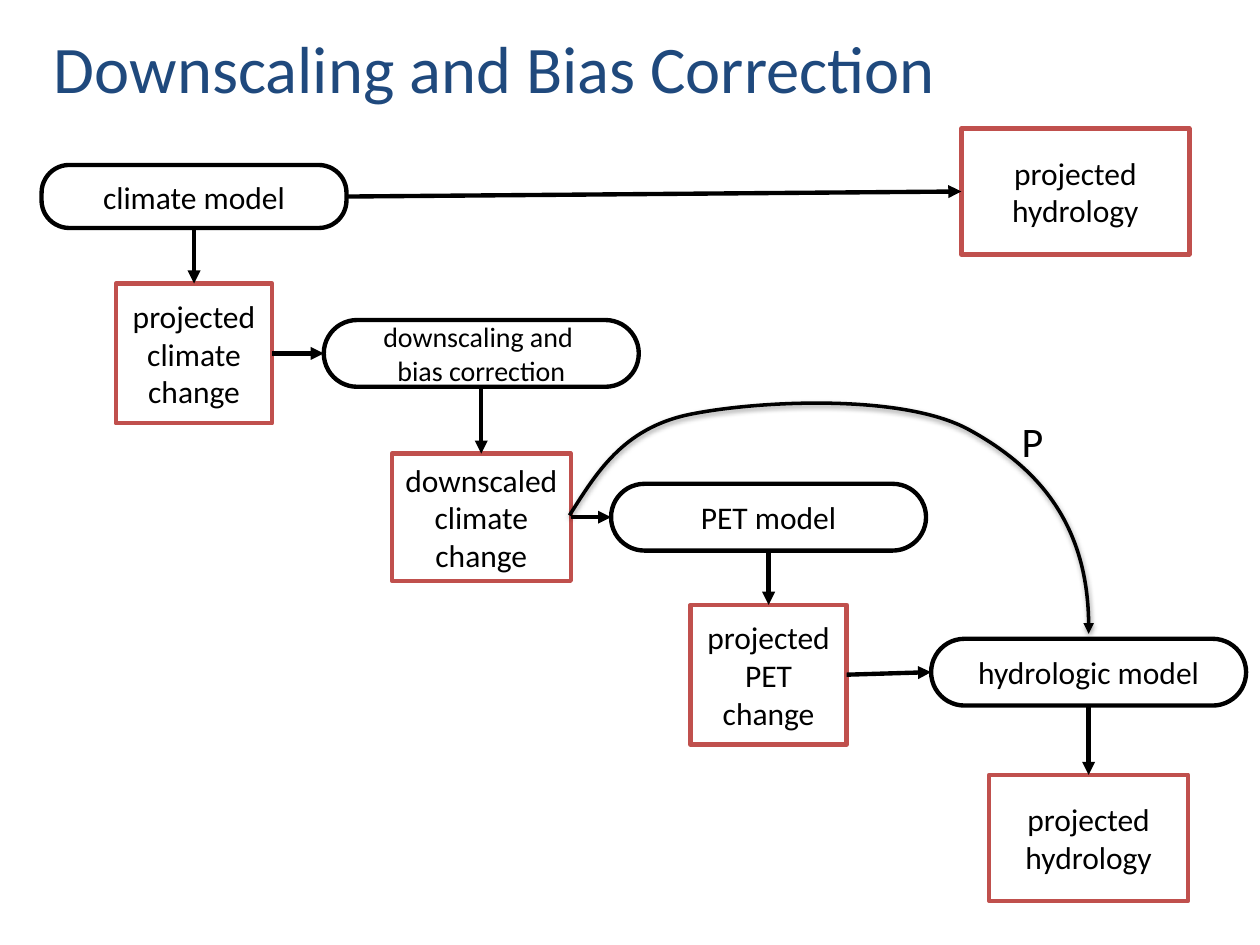
from dataclasses import dataclass

from lxml.etree import SubElement
from pptx import Presentation
from pptx.dml.color import RGBColor
from pptx.enum.shapes import MSO_CONNECTOR as Connector
from pptx.enum.shapes import MSO_SHAPE as Shape
from pptx.enum.text import MSO_ANCHOR as Anchor
from pptx.enum.text import MSO_AUTO_SIZE as AutoSize
from pptx.enum.text import PP_ALIGN as Align
from pptx.oxml.ns import qn
from pptx.util import Inches, Pt

BLACK = RGBColor(0x00, 0x00, 0x00)
RED = RGBColor(0xC0, 0x50, 0x4D)
NAVY = RGBColor(0x1F, 0x49, 0x7D)
FONT = "Calibri"
TOP, LEFT, BOTTOM, RIGHT = range(4)


@dataclass(frozen=True)
class Node:
    name: str
    text: str
    left: float
    top: float
    width: float
    height: float
    size: int = 18
    rounding: float = 0.5


@dataclass(frozen=True)
class Link:
    source: str
    source_side: int
    target: str
    target_side: int


MODELS = [
    Node("climate model", "climate model", 0.33, 1.31, 2.42, 0.5, rounding=0.44),
    Node("downscaling", "downscaling and \vbias correction", 2.57, 2.54, 2.5, 0.53, size=16),
    Node("PET model", "PET model", 4.85, 3.84, 2.5, 0.53),
    Node("hydrologic model", "hydrologic model", 7.39, 5.07, 2.5, 0.53),
]
RESULTS = [
    Node("climate change", "projected\vclimate\vchange", 0.92, 2.25, 1.24, 1.11),
    Node("downscaled change", "downscaled\nclimate\vchange", 3.11, 3.6, 1.42, 1.01),
    Node("PET change", "projected\vPET\vchange", 5.48, 4.8, 1.24, 1.11),
    Node("direct hydrology", "projected\vhydrology", 7.63, 1.02, 1.81, 1),
    Node("final hydrology", "projected\vhydrology", 7.85, 6.15, 1.58, 1),
]
LINKS = [
    Link("climate model", RIGHT, "direct hydrology", LEFT),
    Link("climate model", BOTTOM, "climate change", TOP),
    Link("climate change", RIGHT, "downscaling", LEFT),
    Link("downscaling", BOTTOM, "downscaled change", TOP),
    Link("downscaled change", RIGHT, "PET model", LEFT),
    Link("PET model", BOTTOM, "PET change", TOP),
    Link("PET change", RIGHT, "hydrologic model", LEFT),
    Link("hydrologic model", BOTTOM, "final hydrology", TOP),
]
CURVE_START = (4.52, 4.09)
CURVE_POINTS = [
    (4.73, 3.76), (4.94, 3.4), (5.47, 3.29),
    (6, 3.18), (7.16, 3.12), (7.69, 3.41),
    (8.22, 3.7), (8.66, 4.17), (8.64, 5.03),
]


def write(frame, text: str, size: int, color: RGBColor, align=Align.LEFT) -> None:
    frame.text = text
    for para in frame.paragraphs:
        para.alignment = align
        for span in para.runs:
            span.font.name = FONT
            span.font.size = Pt(size)
            span.font.color.rgb = color


def style_line(line, color: RGBColor, width: float) -> None:
    line.color.rgb = color
    line.width = Pt(width)


def add_arrowhead(line) -> None:
    SubElement(line._get_or_add_ln(), qn("a:tailEnd"), type="triangle")


def add_node(page, node: Node, preset, color: RGBColor):
    box = page.shapes.add_shape(
        preset, Inches(node.left), Inches(node.top), Inches(node.width), Inches(node.height))
    if preset == Shape.ROUNDED_RECTANGLE:
        box.adjustments[0] = node.rounding
    box.shadow.inherit = False
    box.fill.background()
    style_line(box.line, color, 2.5)
    box.text_frame.word_wrap = False
    box.text_frame.vertical_anchor = Anchor.MIDDLE
    write(box.text_frame, node.text, node.size, BLACK, Align.CENTER)
    return box


def add_link(page, link: Link, boxes: dict) -> None:
    arrow = page.shapes.add_connector(Connector.STRAIGHT, 0, 0, 0, 0)
    arrow.begin_connect(boxes[link.source], link.source_side)
    arrow.end_connect(boxes[link.target], link.target_side)
    style_line(arrow.line, BLACK, 2.5)
    add_arrowhead(arrow.line)
    SubElement(arrow._element.spPr, qn("a:effectLst"))


def add_label(page, text: str, left: float, top: float, width: float, height: float,
              size: int, color: RGBColor):
    label = page.shapes.add_textbox(Inches(left), Inches(top), Inches(width), Inches(height))
    write(label.text_frame, text, size, color)
    return label


def add_shadow(shape) -> None:
    shape.shadow.inherit = False
    effects = shape._element.spPr.find(qn("a:effectLst"))
    shadow = SubElement(effects, qn("a:outerShdw"), blurRad=str(Pt(3.1)), dist=str(Pt(1.6)),
                        dir="5400000", rotWithShape="0")
    tint = SubElement(shadow, qn("a:srgbClr"), val=str(BLACK))
    SubElement(tint, qn("a:alpha"), val="38000")


def add_curve(page) -> None:
    builder = page.shapes.build_freeform(*map(Inches, CURVE_START))
    builder.add_line_segments(
        [(Inches(x), Inches(y)) for x, y in CURVE_POINTS], close=False)
    curve = builder.convert_to_shape()
    outline = curve._element.xpath(".//a:path")[0]
    segments = outline.findall(qn("a:lnTo"))
    for first in range(0, len(segments), 3):
        bezier = SubElement(outline, qn("a:cubicBezTo"))
        for segment in segments[first:first + 3]:
            bezier.append(segment[0])
            outline.remove(segment)
    curve.fill.background()
    style_line(curve.line, BLACK, 2)
    add_arrowhead(curve.line)
    add_shadow(curve)


def main() -> None:
    deck = Presentation()
    deck.slide_width, deck.slide_height = Inches(10), Inches(7.5)
    page = deck.slides.add_slide(deck.slide_layouts[6])

    title = add_label(page, "Downscaling and Bias Correction", 0.33, -0.06, 9.41, 1.18, 38, NAVY)
    title.text_frame.word_wrap = True
    title.text_frame.vertical_anchor = Anchor.MIDDLE

    boxes = {node.name: add_node(page, node, Shape.ROUNDED_RECTANGLE, BLACK) for node in MODELS}
    boxes |= {node.name: add_node(page, node, Shape.RECTANGLE, RED) for node in RESULTS}
    for link in LINKS:
        add_link(page, link, boxes)

    add_curve(page)
    rainfall = add_label(page, "P", 8.01, 3.25, 0.38, 0.5, 24, BLACK)
    rainfall.text_frame.word_wrap = False
    rainfall.text_frame.auto_size = AutoSize.SHAPE_TO_FIT_TEXT

    deck.save("out.pptx")


if __name__ == "__main__":
    main()
